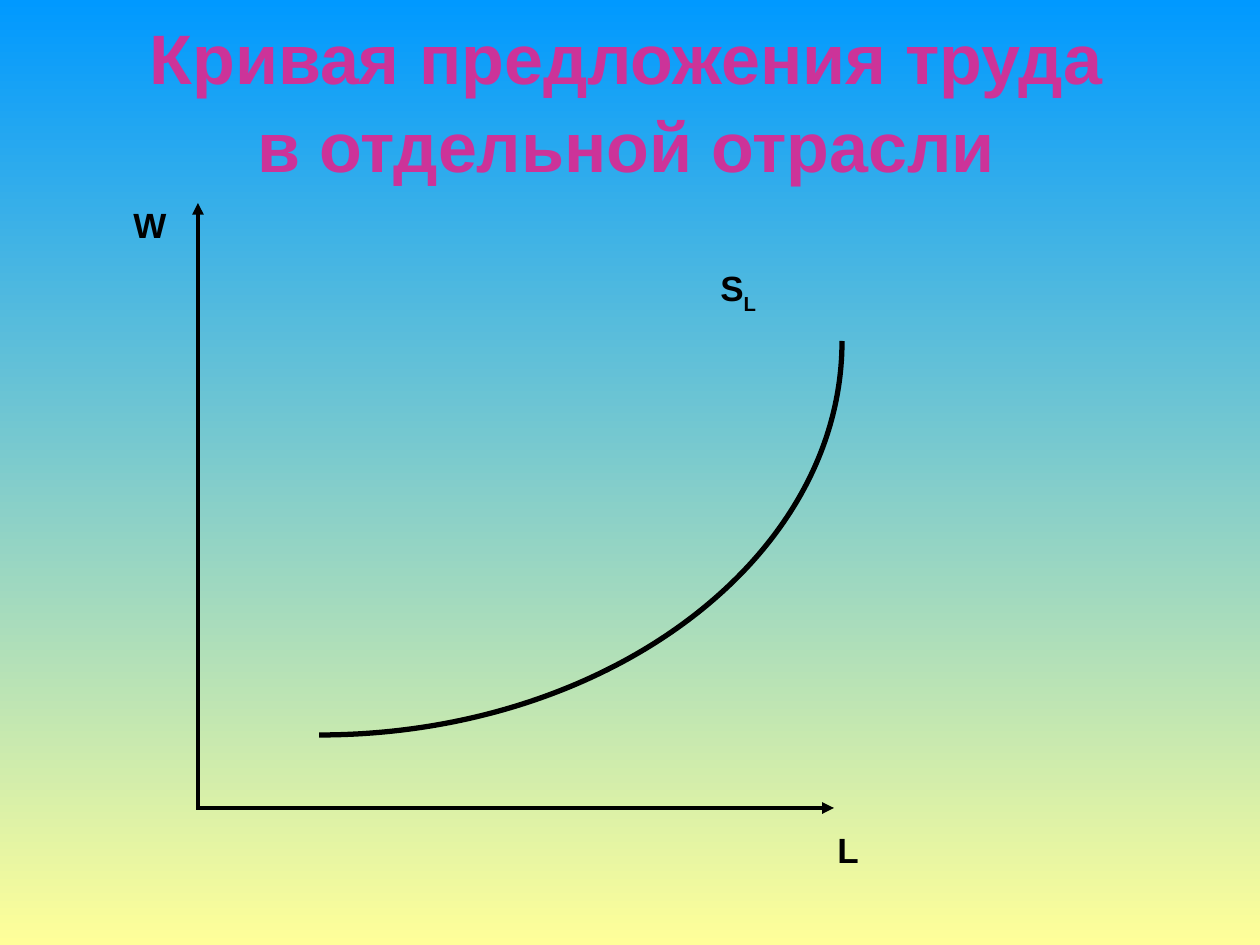
from dataclasses import dataclass

from lxml.etree import SubElement
from pptx import Presentation
from pptx.dml.color import RGBColor as Rgb
from pptx.enum.shapes import MSO_CONNECTOR as Link
from pptx.enum.text import MSO_ANCHOR as Anchor, PP_ALIGN as Align
from pptx.oxml.ns import qn
from pptx.slide import Slide
from pptx.util import Pt

SCALE = 914400 / 126  # EMU per px


@dataclass(frozen=True)
class Theme:
    font: str = "Arial"
    sky: str = "0099FF"
    sand: str = "FFFF99"
    pink: str = "CC3399"
    ink: str = "000000"
    title: int = 40
    label: int = 20
    axis: float = 2.25
    curve: float = 3


@dataclass(frozen=True)
class Label:
    box: tuple[int, int, int, int]
    text: str
    sub: str = ""


@dataclass(frozen=True)
class Axis:
    start: tuple[int, int]
    end: tuple[int, int]


THEME = Theme()
TITLE_BOX = (43, 0, 1166, 196)
TITLE = ("Кривая предложения труда", "в отдельной отрасли")
AXES = (
    Axis((198, 810), (198, 203)),
    Axis((198, 808), (834, 808)),
)
LABELS = (
    Label((121, 197, 68, 68), "W"),
    Label((825, 822, 71, 66), "L"),
    Label((708, 260, 111, 72), "S", "L"),
)
# Start, two handles and end of the supply curve
CURVE = ((319, 735), (607, 735), (842, 559), (842, 341))


def emu(px: int) -> int:
    return round(px * SCALE)


def add_box(slide: Slide, box: tuple[int, int, int, int]):
    frame = slide.shapes.add_textbox(*map(emu, box)).text_frame
    frame.word_wrap = True
    return frame


def add_run(para, text: str, size: int, color: str):
    run = para.add_run()
    run.text = text
    font = run.font
    font.name, font.size, font.bold = THEME.font, Pt(size), True
    font.color.rgb = Rgb.from_string(color)
    return run


def set_line(line, width: float) -> None:
    line.color.rgb = Rgb.from_string(THEME.ink)
    line.width = Pt(width)


def paint(slide: Slide) -> None:
    """Fill the background from sky at the top to sand at the bottom."""
    fill = slide.background.fill
    fill.gradient()
    fill.gradient_angle = 270
    for stop, color in zip(fill.gradient_stops, (THEME.sky, THEME.sand)):
        stop.color.rgb = Rgb.from_string(color)


def add_title(slide: Slide) -> None:
    frame = add_box(slide, TITLE_BOX)
    frame.vertical_anchor = Anchor.MIDDLE
    para = frame.paragraphs[0]
    para.alignment = Align.CENTER
    para.line_spacing = 1.05
    for row, text in enumerate(TITLE):
        if row:
            para.add_line_break()
        add_run(para, text, THEME.title, THEME.pink)


def add_label(slide: Slide, label: Label) -> None:
    para = add_box(slide, label.box).paragraphs[0]
    add_run(para, label.text, THEME.label, THEME.ink)
    if label.sub:
        run = add_run(para, label.sub, THEME.label, THEME.ink)
        run._r.get_or_add_rPr().set("baseline", "-30000")


def add_axis(slide: Slide, axis: Axis) -> None:
    ends = map(emu, axis.start + axis.end)
    link = slide.shapes.add_connector(Link.STRAIGHT, *ends)
    set_line(link.line, THEME.axis)
    SubElement(link.line._get_or_add_ln(), qn("a:tailEnd"), type="triangle")
    SubElement(link._element.spPr, qn("a:effectLst"))


def add_curve(slide: Slide) -> None:
    """Draw an open outline and turn its segments into one Bézier curve."""
    pen = slide.shapes.build_freeform(*CURVE[0], scale=SCALE)
    pen.add_line_segments(CURVE[1:], close=False)
    shape = pen.convert_to_shape()
    shape.shadow.inherit = False
    shape.fill.background()
    set_line(shape.line, THEME.curve)
    track = next(shape._element.iter(qn("a:path")))
    steps = track.findall(qn("a:lnTo"))
    bend = SubElement(track, qn("a:cubicBezTo"))
    for step in steps:
        bend.append(step[0])
        track.remove(step)


def main() -> None:
    deck = Presentation()
    deck.slide_width, deck.slide_height = emu(1260), emu(945)
    slide = deck.slides.add_slide(deck.slide_layouts[6])
    paint(slide)
    add_title(slide)
    for axis in AXES:
        add_axis(slide, axis)
    add_curve(slide)
    for label in LABELS:
        add_label(slide, label)
    deck.save("out.pptx")


if __name__ == "__main__":
    main()
